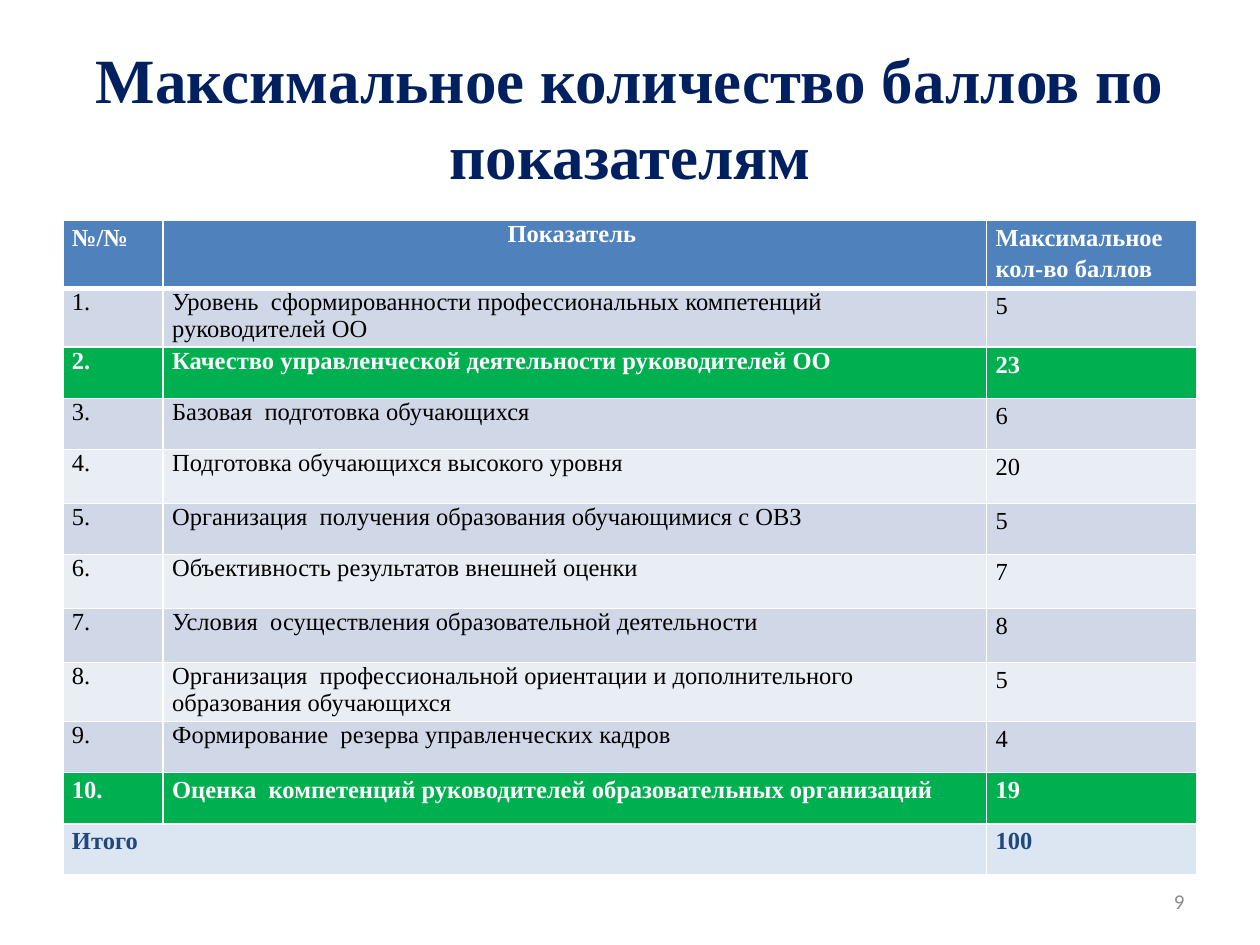
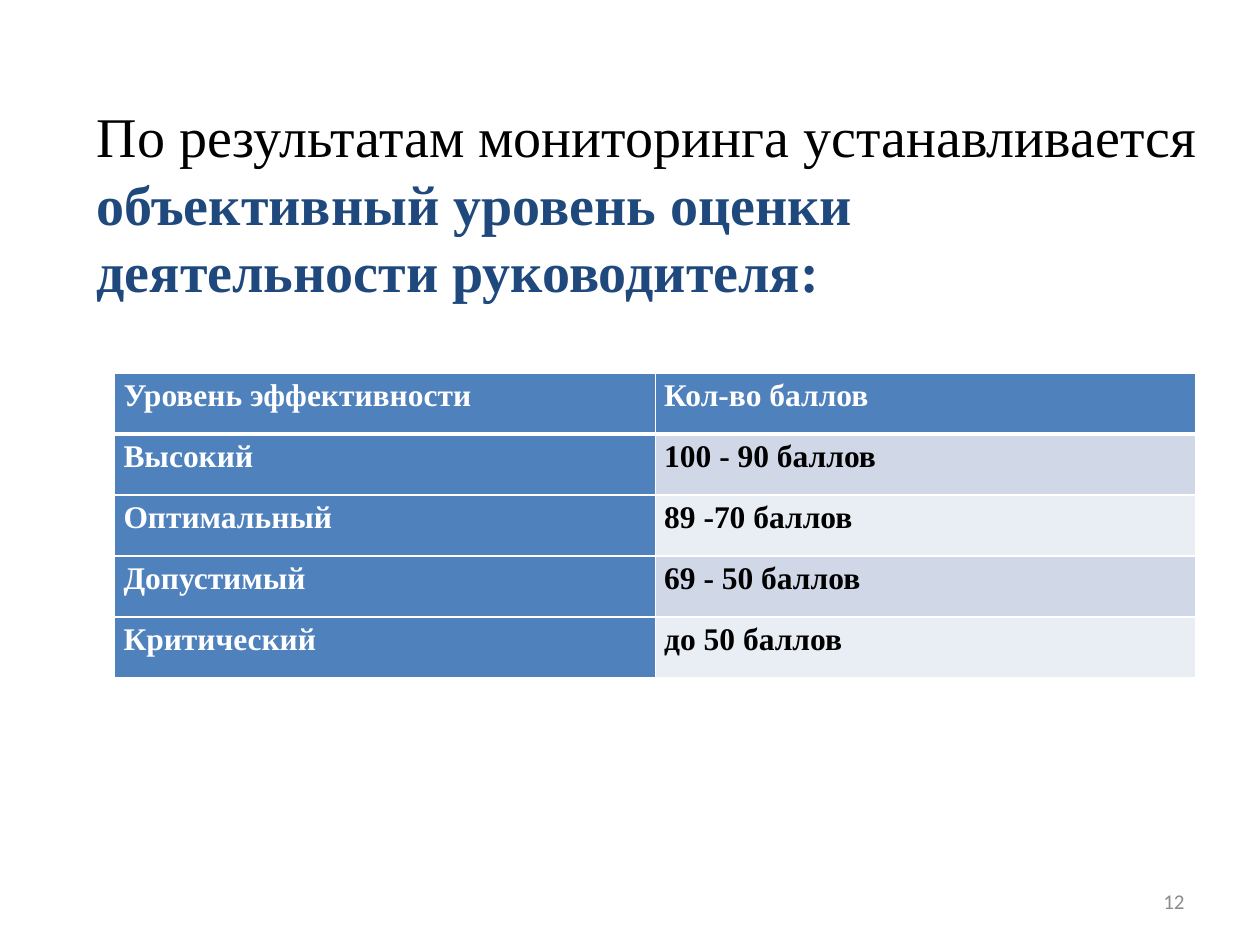
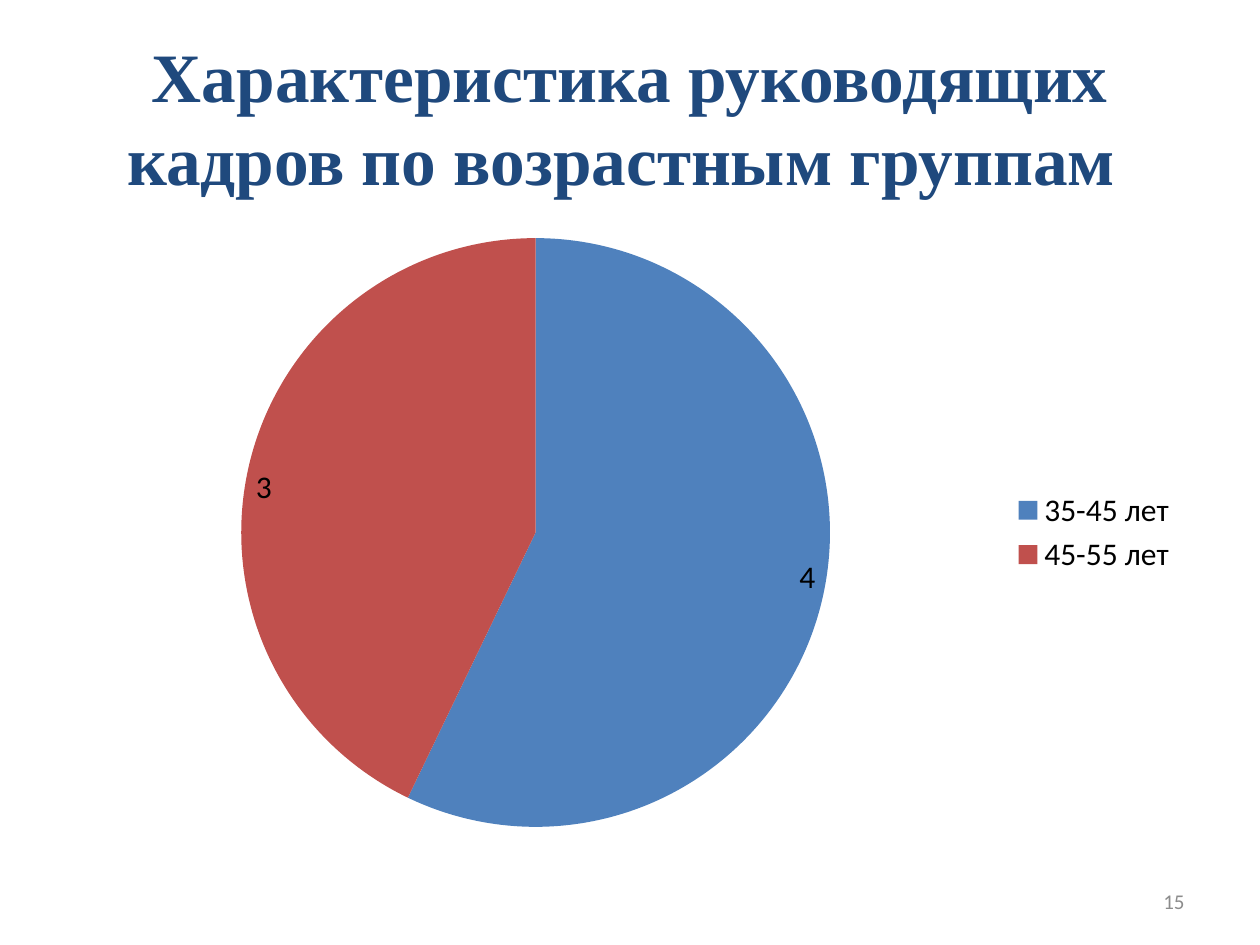
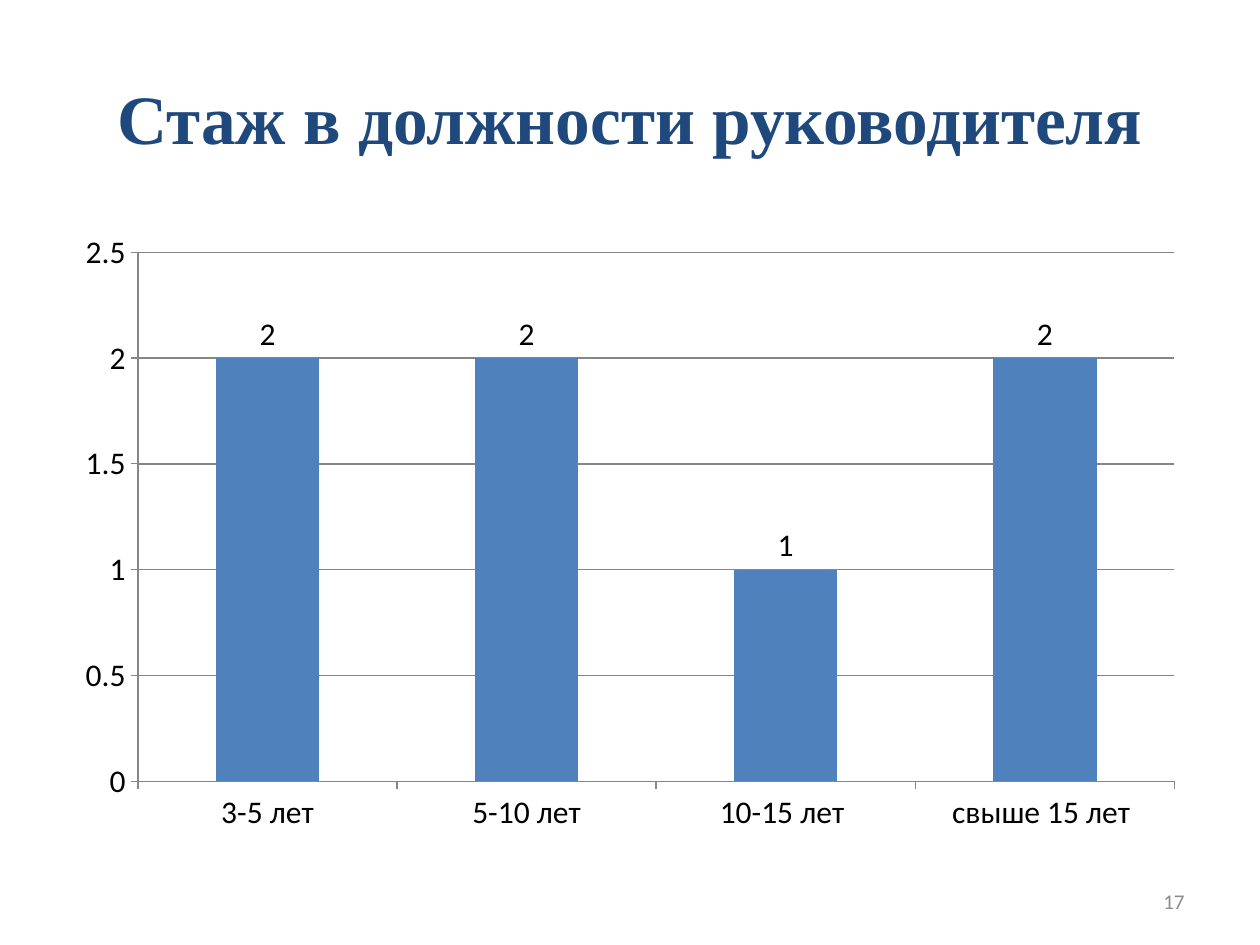
from lxml.etree import SubElement
from pptx import Presentation
from pptx.chart.data import CategoryChartData
from pptx.dml.color import RGBColor
from pptx.enum.chart import XL_CHART_TYPE, XL_LABEL_POSITION, XL_LEGEND_POSITION, XL_TICK_MARK
from pptx.enum.text import MSO_ANCHOR, PP_ALIGN
from pptx.oxml.ns import qn
from pptx.util import Cm, Pt

# Shared look
COLORS = {
    "white": "FFFFFF", "black": "000000", "navy": "002060", "blue": "1F497D",
    "header": "4F81BD", "band_dark": "D0D8E8", "band_light": "E9EDF4",
    "green": "00B050", "total": "DCE6F2", "red": "C0504D",
    "axis": "868686", "number": "8C8C8C",
}
SERIF, SANS = "Times New Roman", "Calibri"
TITLE_AREA = (1.27, 0.76, 22.86, 3.18)
CHART_AREA = (1.27, 4.45, 22.86, 12.57)
NUMBER_AREA = (18.2, 17.65, 5.93, 1.02)

# Slide content
SCORES_TITLE = "Максимальное количество баллов по показателям"
SCORES_HEADER = ("№/№", "Показатель ", "Максимальное кол-во баллов")
SCORES = [
    ("Уровень  сформированности профессиональных компетенций руководителей ОО", 5),
    ("Качество управленческой деятельности руководителей ОО", 23),
    ("Базовая  подготовка обучающихся", 6),
    ("Подготовка обучающихся высокого уровня", 20),
    ("Организация  получения образования обучающимися с ОВЗ", 5),
    ("Объективность результатов внешней оценки", 7),
    ("Условия  осуществления образовательной деятельности", 8),
    ("Организация  профессиональной ориентации и дополнительного образования обучающихся", 5),
    ("Формирование  резерва управленческих кадров", 4),
    ("Оценка  компетенций руководителей образовательных организаций", 19),
]
SCORES_TOTAL = ("Итого", "", "100")
HIGHLIGHTED_ROWS = (2, 10)
TALL_ROWS = (1, 4, 6, 7, 8)

LEVELS_INTRO = [
    ("По результатам мониторинга устанавливается ", "black", False),
    ("объективный уровень оценки деятельности руководителя:", "blue", True),
]
LEVELS = [
    ("Уровень эффективности", "Кол-во баллов"),
    ("Высокий", "100 - 90 баллов"),
    ("Оптимальный", "89 -70 баллов"),
    ("Допустимый", "69 - 50 баллов"),
    ("Критический", "до 50 баллов"),
]

AGES_TITLE = "Характеристика руководящих кадров по возрастным группам "
AGES = {"35-45 лет ": 4, "45-55 лет": 3}
TENURE_TITLE = "Стаж в должности руководителя"
TENURE = {"3-5 лет": 2, "5-10 лет": 2, "10-15 лет ": 1, "свыше 15 лет ": 2}


def color(name):
    return RGBColor.from_string(COLORS[name])


def style_font(font, size, color_name, bold=False, face=SERIF):
    font.size, font.bold, font.name = Pt(size), bold, face
    font.color.rgb = color(color_name)


def add_text(page, area, spans, size, align=PP_ALIGN.LEFT, anchor=MSO_ANCHOR.MIDDLE, face=SERIF):
    frame = page.shapes.add_textbox(*map(Cm, area)).text_frame
    frame.word_wrap = True
    frame.vertical_anchor = anchor
    para = frame.paragraphs[0]
    para.alignment = align
    for text, color_name, bold in spans:
        span = para.add_run()
        span.text = text
        style_font(span.font, size, color_name, bold, face)
    return para


def add_page(deck, number, title=None, title_size=39.6, title_color="blue"):
    page = deck.slides.add_slide(deck.slide_layouts[6])
    if title:
        add_text(page, TITLE_AREA, [(title, title_color, True)], title_size, PP_ALIGN.CENTER)
    add_text(page, NUMBER_AREA, [(str(number), "number", False)], 12, PP_ALIGN.RIGHT, face=SANS)
    return page


# Tables
def add_borders(cell, bottom_width):
    properties = cell._tc.get_or_add_tcPr()
    for index, side in enumerate("LRTB"):
        width = bottom_width if side == "B" else 1
        line = SubElement(properties, qn(f"a:ln{side}"), w=str(Pt(width)))
        fill = SubElement(line, qn("a:solidFill"))
        SubElement(fill, qn("a:srgbClr"), val=COLORS["white"])
        properties.insert(index, line)


def add_grid(page, left, top, widths, heights):
    table = page.shapes.add_table(len(heights), len(widths), Cm(left), Cm(top),
                                  Cm(sum(widths)), Cm(sum(heights))).table
    for column, width in zip(table.columns, widths):
        column.width = Cm(width)
    for row, height in zip(table.rows, heights):
        row.height = Cm(height)
    return table


def fill_cell(cell, text, size, fill, text_color, bold, spacing=1.15, bottom_width=1):
    cell.margin_left = cell.margin_right = Cm(0.18)
    cell.margin_top = cell.margin_bottom = 0
    cell.fill.solid()
    cell.fill.fore_color.rgb = color(fill)
    add_borders(cell, bottom_width)
    para = cell.text_frame.paragraphs[0]
    para.text = text
    para.line_spacing = spacing
    for span in para.runs:
        style_font(span.font, size, text_color, bold)


def band(row):
    return "band_dark" if row % 2 else "band_light"


def scores_style(row, last):
    if row == 0:
        return "header", "white", True
    if row == last:
        return "total", "blue", True
    if row in HIGHLIGHTED_ROWS:
        return "green", "white", True
    return band(row), "black", False


def build_scores(deck):
    page = add_page(deck, 9, SCORES_TITLE, 36, "navy")
    rows = [SCORES_HEADER]
    rows += [(f"{place}.", name, str(score)) for place, (name, score) in enumerate(SCORES, 1)]
    rows.append(SCORES_TOTAL)
    last = len(rows) - 1
    heights = [1.24] + [1.09 if row in TALL_ROWS else 1.03 for row in range(1, last + 1)]
    table = add_grid(page, 1.27, 4.45, (2.02, 16.6, 4.23), heights)
    for row, texts in enumerate(rows):
        for column, text in enumerate(texts):
            loose = column == 2 or row >= last - 1 or (row == 0 and column == 0)
            fill_cell(table.cell(row, column), text, 14, *scores_style(row, last),
                      spacing=1.15 if loose else 1.0, bottom_width=1 if row else 3)
    table.cell(0, 1).text_frame.paragraphs[0].alignment = PP_ALIGN.CENTER
    table.cell(last, 0).merge(table.cell(last, 1))


def build_levels(deck):
    page = add_page(deck, 12)
    intro = add_text(page, (1.7, 1.93, 22.86, 12.57), LEVELS_INTRO, 32, anchor=MSO_ANCHOR.TOP)
    intro.space_before = Pt(6.4)
    table = add_grid(page, 2.31, 7.52, (10.9, 10.9), [1.23] * len(LEVELS))
    for row, texts in enumerate(LEVELS):
        for column, text in enumerate(texts):
            is_header = row == 0 or column == 0
            fill_cell(table.cell(row, column), text, 18,
                      "header" if is_header else band(row),
                      "white" if is_header else "black", True,
                      bottom_width=1 if row else 3)


# Charts
def add_value_chart(page, kind, values, label_position):
    data = CategoryChartData()
    data.categories = list(values)
    data.add_series("Series 1", list(values.values()))
    chart = page.shapes.add_chart(kind, *map(Cm, CHART_AREA), data).chart
    style_font(chart.font, 18, "black", face=SANS)
    chart.has_title = chart.has_legend = False
    plot = chart.plots[0]
    plot.has_data_labels = True
    plot.data_labels.show_value = True
    plot.data_labels.show_percentage = False
    plot.data_labels.position = label_position
    return chart


def paint(part, color_name):
    part.format.fill.solid()
    part.format.fill.fore_color.rgb = color(color_name)


def build_ages(deck):
    page = add_page(deck, 15, AGES_TITLE)
    chart = add_value_chart(page, XL_CHART_TYPE.PIE, AGES, XL_LABEL_POSITION.INSIDE_END)
    chart.plots[0].vary_by_categories = True
    for index, color_name in enumerate(("header", "red")):
        paint(chart.series[0].points[index], color_name)
    chart.has_legend = True
    chart.legend.position = XL_LEGEND_POSITION.RIGHT
    chart.legend.include_in_layout = False


def build_tenure(deck):
    page = add_page(deck, 17, TENURE_TITLE)
    chart = add_value_chart(page, XL_CHART_TYPE.COLUMN_CLUSTERED, TENURE,
                            XL_LABEL_POSITION.OUTSIDE_END)
    plot = chart.plots[0]
    plot.gap_width = 150
    plot.vary_by_categories = False
    paint(plot.series[0], "header")
    scale = chart.value_axis
    scale.minimum_scale, scale.maximum_scale, scale.major_unit = 0, 2.5, 0.5
    scale.has_major_gridlines = True
    for axis in (scale, chart.category_axis):
        axis.major_tick_mark = XL_TICK_MARK.OUTSIDE
        axis.minor_tick_mark = XL_TICK_MARK.NONE
    for part in (scale, chart.category_axis, scale.major_gridlines):
        part.format.line.color.rgb = color("axis")
        part.format.line.width = Pt(0.75)


def main():
    deck = Presentation()
    deck.slide_width, deck.slide_height = Cm(25.4), Cm(19.05)
    for build in (build_scores, build_levels, build_ages, build_tenure):
        build(deck)
    deck.save("out.pptx")


if __name__ == "__main__":
    main()
